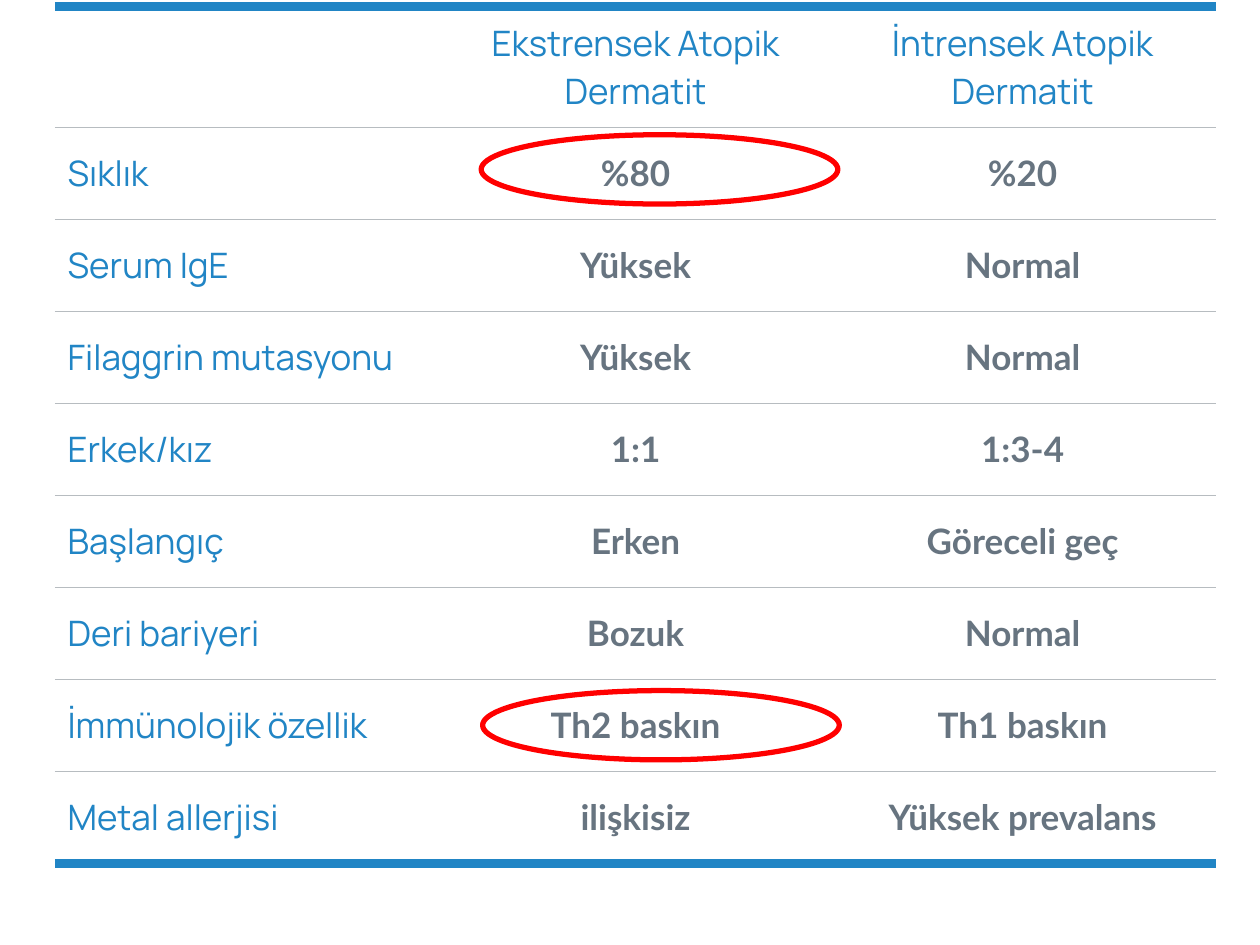
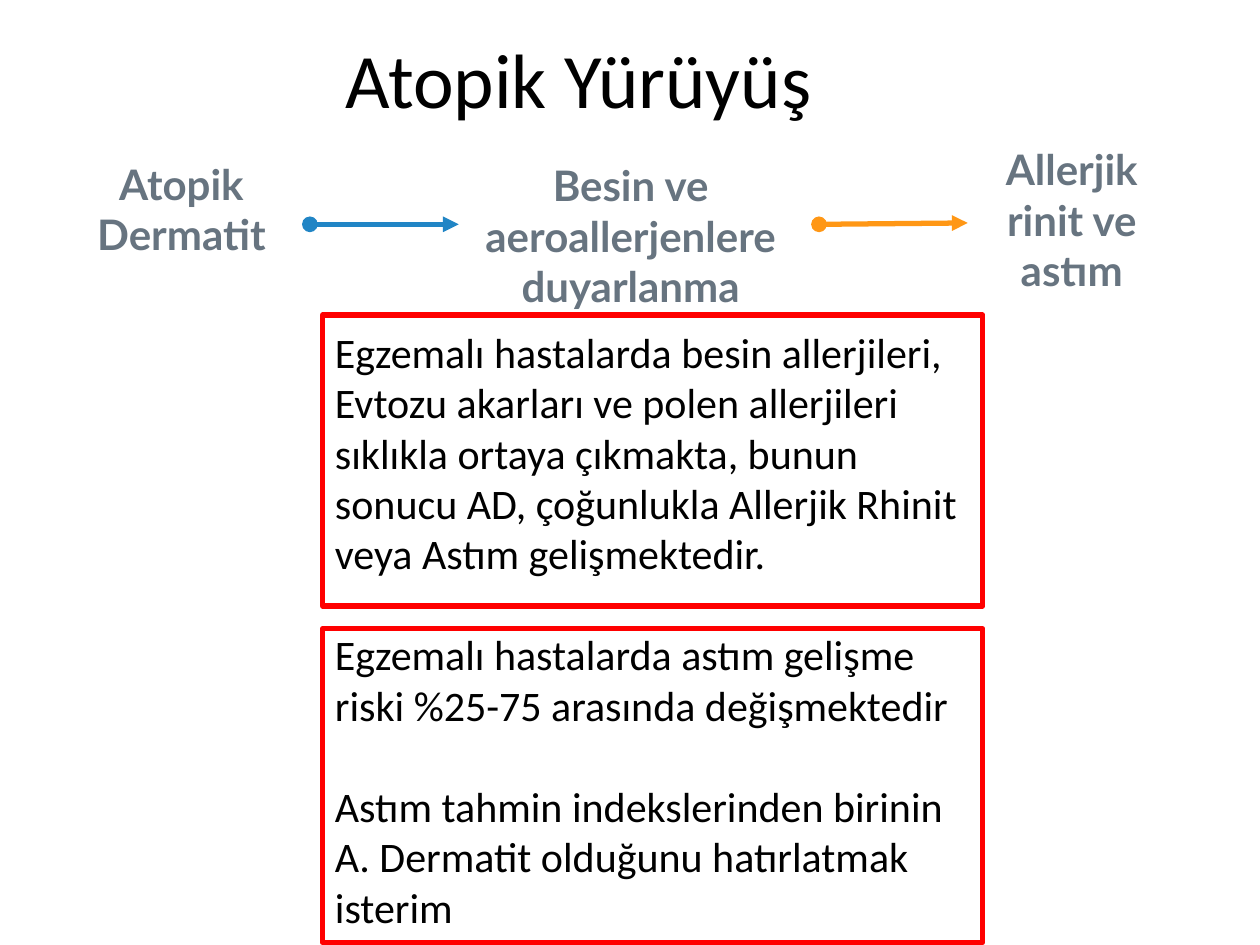
"""Build two slides on atopic dermatitis: a comparison table and the atopic march."""
from lxml.etree import SubElement
from pptx import Presentation
from pptx.dml.color import RGBColor
from pptx.enum.shapes import MSO_CONNECTOR, MSO_SHAPE
from pptx.enum.text import MSO_ANCHOR, PP_ALIGN
from pptx.oxml.ns import qn
from pptx.util import Pt

COLOURS = {
    "blue": "2185C5",
    "orange": "FF9715",
    "slate": "677480",
    "rule": "B7BCC0",
    "red": "FF0000",
    "black": "000000",
}
LABEL = {"font": "Manrope", "size": 20, "colour": "blue"}
VALUE = {"font": "Lato", "size": 20, "colour": "slate", "bold": True}
TITLE = {"font": "Calibri", "size": 44, "colour": "black"}
STAGE = {"font": "Lato", "size": 24, "colour": "slate", "bold": True}
BODY = {"font": "Calibri", "size": 24, "colour": "black"}

COMPARISON = [
    ("", "Ekstrensek Atopik Dermatit", "İntrensek Atopik Dermatit"),
    ("Sıklık", "%80", "%20"),
    ("Serum IgE", "Yüksek", "Normal"),
    ("Filaggrin mutasyonu", "Yüksek", "Normal"),
    ("Erkek/kız", "1:1", "1:3-4"),
    ("Başlangıç", "Erken", "Göreceli geç"),
    ("Deri bariyeri", "Bozuk", "Normal"),
    ("İmmünolojik özellik", "Th2 baskın", "Th1 baskın"),
    ("Metal allerjisi", "ilişkisiz", "Yüksek prevalans"),
]
STAGES = [
    ("Atopik Dermatit", (42.5, 94.3, 122.4, 49.7)),
    ("Besin ve aeroallerjenlere duyarlanma", (262.8, 94.3, 195.1, 80.6)),
    ("Allerjik rinit ve astım", (553, 82.8, 118.8, 85)),
]
ARROWS = [("blue", (177.1, 128.2, 262.1, 128.2)), ("orange", (468, 128.2, 553, 127.4))]
FINDINGS = [
    "Egzemalı hastalarda besin allerjileri, Evtozu akarları ve polen allerjileri "
    "sıklıkla ortaya çıkmakta, bunun sonucu AD, çoğunlukla Allerjik Rhinit veya "
    "Astım gelişmektedir.",
    "Egzemalı hastalarda astım gelişme riski %25-75 arasında değişmektedir",
    "Astım tahmin indekslerinden birinin A. Dermatit olduğunu hatırlatmak isterim",
]


def rgb(name):
    """Return the named palette colour."""
    return RGBColor.from_string(COLOURS[name])


def points(values):
    """Convert numbers to lengths in points."""
    return [Pt(value) for value in values]


def write(paragraph, text, style, align=PP_ALIGN.LEFT):
    """Add one styled run to a paragraph."""
    paragraph.alignment = align
    span = paragraph.add_run()
    span.text = text
    span.font.name = style["font"]
    span.font.size = Pt(style["size"])
    span.font.bold = style.get("bold", False)
    span.font.color.rgb = rgb(style["colour"])


def add_text(page, box, texts, style, align=PP_ALIGN.CENTER,
             anchor=MSO_ANCHOR.MIDDLE, margin_y=7.2, gap=0):
    """Place a wrapped text box with one paragraph per text."""
    frame = page.shapes.add_textbox(*points(box)).text_frame
    frame.word_wrap = True
    frame.vertical_anchor = anchor
    frame.margin_left = frame.margin_right = Pt(7.2)
    frame.margin_top = frame.margin_bottom = Pt(margin_y)
    for index, text in enumerate(texts):
        paragraph = frame.paragraphs[0] if index == 0 else frame.add_paragraph()
        if index:
            paragraph.space_before = Pt(gap)
        write(paragraph, text, style, align)


def add_outline(page, kind, box):
    """Draw an unfilled red outline."""
    outline = page.shapes.add_shape(kind, *points(box))
    outline.shadow.inherit = False
    outline.fill.background()
    outline.line.color.rgb = rgb("red")
    outline.line.width = Pt(3)


def add_arrow(page, colour, ends):
    """Draw an arrow with a round start and a triangular tip."""
    arrow = page.shapes.add_connector(MSO_CONNECTOR.STRAIGHT, *points(ends))
    arrow.line.color.rgb = rgb(colour)
    arrow.line.width = Pt(3)
    line = arrow.line._get_or_add_ln()
    SubElement(line, qn("a:headEnd"), type="oval")
    SubElement(line, qn("a:tailEnd"), type="triangle")
    SubElement(arrow._element.spPr, qn("a:effectLst"))


def set_borders(cell, top, bottom):
    """Give a cell its horizontal rules and no vertical ones."""
    properties = cell._tc.get_or_add_tcPr()
    for side in ("lnL", "lnR"):
        SubElement(SubElement(properties, qn(f"a:{side}"), w="0"), qn("a:noFill"))
    for side, (colour, width) in (("lnT", top), ("lnB", bottom)):
        line = SubElement(properties, qn(f"a:{side}"), w=str(Pt(width)))
        fill = SubElement(line, qn("a:solidFill"))
        SubElement(fill, qn("a:srgbClr"), val=COLOURS[colour])


def add_comparison(page, box, header_height):
    """Fill the box with the comparison table."""
    rows, columns = len(COMPARISON), len(COMPARISON[0])
    table = page.shapes.add_table(rows, columns, *points(box)).table
    table.first_row = table.horz_banding = False
    for column in table.columns:
        column.width = Pt(box[2] / columns)
    thin, thick = ("rule", 0.75), ("blue", 6)
    row_height = (box[3] - header_height) / (rows - 1)
    for i, texts in enumerate(COMPARISON):
        table.rows[i].height = Pt(row_height if i else header_height)
        for j, text in enumerate(texts):
            cell = table.cell(i, j)
            cell.vertical_anchor = MSO_ANCHOR.MIDDLE
            cell.margin_left = cell.margin_right = Pt(7.2)
            cell.margin_top = cell.margin_bottom = Pt(7.2)
            set_borders(cell, thin if i else thick, thick if i == rows - 1 else thin)
            cell.fill.background()
            if text:
                write(cell.text_frame.paragraphs[0], text, VALUE if i and j else LABEL,
                      PP_ALIGN.CENTER if j else PP_ALIGN.LEFT)


def build_comparison_slide(page):
    """Show the table and ring its two key values."""
    add_comparison(page, (31.4, 3.6, 663.6, 488.9), 68.4)
    for left, top in ((275, 77), (275.8, 394.6)):
        add_outline(page, MSO_SHAPE.OVAL, (left, top, 203.8, 39.6))


def add_findings(page, box):
    """Write the findings and frame them in two rectangles."""
    left, top, width, height = box
    add_text(page, (left, top + 2.9, width, height - 2.9), FINDINGS, BODY,
             PP_ALIGN.LEFT, MSO_ANCHOR.TOP, margin_y=3.6, gap=29)
    for offset, frame_height in ((179.3, 179.3), (0, 166.3)):
        add_outline(page, MSO_SHAPE.RECTANGLE, (left, top + offset, width, frame_height))


def build_march_slide(page):
    """Show the stages of the atopic march and the findings below."""
    add_text(page, (76.3, 20.9, 509, 56.9), ["Atopik Yürüyüş"], TITLE,
             anchor=MSO_ANCHOR.BOTTOM)
    for colour, ends in ARROWS:
        add_arrow(page, colour, ends)
    for text, box in STAGES:
        add_text(page, box, [text], STAGE)
    add_findings(page, (184.3, 180, 377.3, 358.6))


def main():
    """Build and save the deck."""
    deck = Presentation()
    deck.slide_width, deck.slide_height = Pt(720), Pt(540)
    for build in (build_comparison_slide, build_march_slide):
        build(deck.slides.add_slide(deck.slide_layouts[6]))
    deck.save("out.pptx")


if __name__ == "__main__":
    main()
